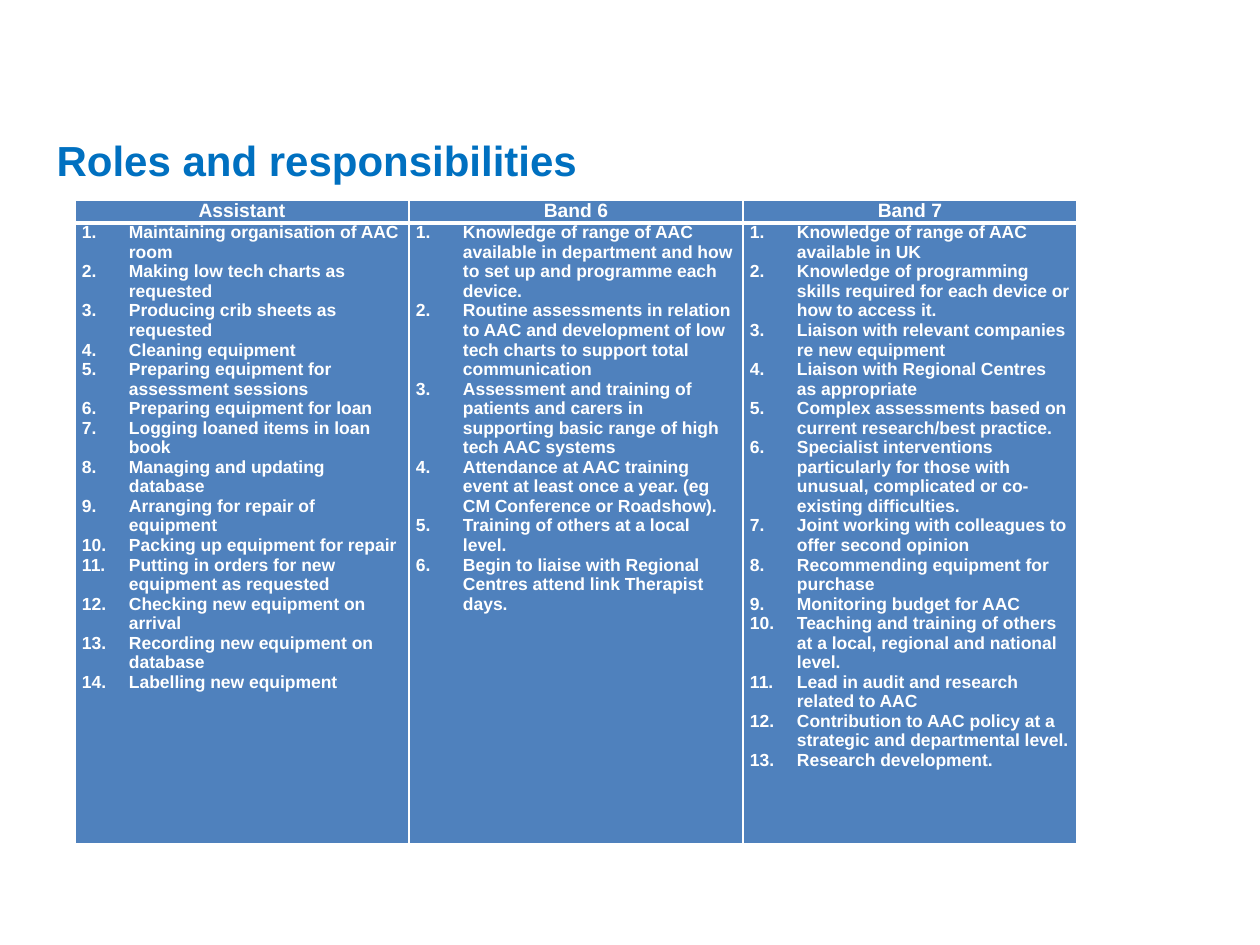
from pptx import Presentation, util as u
from pptx.dml.color import RGBColor
from pptx.enum import text
from pptx.oxml import parse_xml
from pptx.oxml.ns import nsdecls

SCALE = 914400 / 126
FONT = "Arial"
WHITE, BLUE, TITLE_BLUE = "FFFFFF", "4F81BD", "0070C0"

ROLES = {
    "Assistant": [
        "Maintaining organisation of AAC room",
        "Making low tech charts as requested",
        "Producing crib sheets as requested",
        "Cleaning equipment",
        "Preparing equipment for assessment sessions",
        "Preparing equipment for loan",
        "Logging loaned items in loan book",
        "Managing and updating database",
        "Arranging for repair of equipment",
        "Packing up equipment for repair",
        "Putting in orders for new equipment as requested",
        "Checking new equipment on arrival",
        "Recording new equipment on database",
        "Labelling new equipment",
    ],
    "Band 6": [
        "Knowledge of range of AAC available in department and how to set up and programme each device.",
        "Routine assessments in relation to AAC and development of low tech charts to support total communication",
        "Assessment and training of patients and carers in supporting basic range of high tech AAC systems",
        "Attendance at AAC training event at least once a year. (eg CM Conference or Roadshow).",
        "Training of others at a local level.",
        "Begin to liaise with Regional Centres attend link Therapist days.",
    ],
    "Band 7": [
        "Knowledge of range of AAC available in UK",
        "Knowledge of programming skills required for each device or how to access it.",
        "Liaison with relevant companies re new equipment",
        "Liaison with Regional Centres as appropriate",
        "Complex assessments based on current research/best practice.",
        "Specialist interventions particularly for those with unusual, complicated or co-existing difficulties.",
        "Joint working with colleagues to offer second opinion",
        "Recommending equipment for purchase",
        "Monitoring budget for AAC",
        "Teaching and training of others at a local, regional and national level.",
        "Lead in audit and research related to AAC",
        "Contribution to AAC policy at a strategic and departmental level.",
        "Research development.",
    ],
}


def px(length):
    """Turn pixels into EMU."""
    return u.Emu(round(length * SCALE))


def color(value):
    """Turn a hex string into a colour."""
    return RGBColor.from_string(value)


def add_span(para, words, size, ink):
    """Add one bold run to a paragraph."""
    span = para.add_run()
    span.text = words
    span.font.name = FONT
    span.font.size = u.Pt(size)
    span.font.bold = True
    span.font.color.rgb = color(ink)


def number_para(para):
    """Give a paragraph automatic numbering with a hanging indent."""
    props = para._p.get_or_add_pPr()
    props.set("marL", str(px(47)))
    props.set("indent", str(px(-47)))
    props.append(parse_xml(f'<a:buFont {nsdecls("a")} typeface="{FONT}"/>'))
    props.append(parse_xml(f'<a:buAutoNum {nsdecls("a")} type="arabicPeriod"/>'))
    props.append(parse_xml(f'<a:tabLst {nsdecls("a")}><a:tab pos="{px(63)}" algn="l"/></a:tabLst>'))


def style_cell(cell, top, bottom):
    """Set a cell's margins, white borders and blue fill."""
    cell.margin_left = cell.margin_right = px(7)
    cell.margin_top = cell.margin_bottom = 0
    props = cell._tc.get_or_add_tcPr()
    for side, width in zip("LRTB", (1, 1, top, bottom)):
        props.append(parse_xml(
            f'<a:ln{side} {nsdecls("a")} w="{u.Pt(width)}"><a:solidFill>'
            f'<a:srgbClr val="{WHITE}"/></a:solidFill></a:ln{side}>'))
    cell.fill.solid()
    cell.fill.fore_color.rgb = color(BLUE)


def add_title(page, left, top, width, height):
    """Place the heading in the title placeholder."""
    box = page.shapes.title
    box.left, box.top, box.width, box.height = map(px, (left, top, width, height))
    box.text_frame.vertical_anchor = text.MSO_ANCHOR.MIDDLE
    para = box.text_frame.paragraphs[0]
    para.alignment = text.PP_ALIGN.LEFT
    add_span(para, "Roles and responsibilities", 24, TITLE_BLUE)


def add_roles(page, left, top, width, height):
    """Place the table with one column of numbered duties per role."""
    header = 23
    table = page.shapes.add_table(2, len(ROLES), *map(px, (left, top, width, height))).table
    table.rows[0].height = px(header)
    table.rows[1].height = px(height - header)
    for index, (role, duties) in enumerate(ROLES.items()):
        table.columns[index].width = px(width / len(ROLES))
        head, body = table.cell(0, index), table.cell(1, index)
        style_cell(head, 1, 3)
        style_cell(body, 3, 1)
        para = head.text_frame.paragraphs[0]
        para.alignment = text.PP_ALIGN.CENTER
        add_span(para, role, 11, WHITE)
        for row, duty in enumerate(duties):
            frame = body.text_frame
            para = frame.add_paragraph() if row else frame.paragraphs[0]
            number_para(para)
            add_span(para, duty, 10, WHITE)


def main():
    """Build and save the deck."""
    deck = Presentation()
    deck.slide_width, deck.slide_height = px(1260), px(945)
    page = deck.slides.add_slide(deck.slide_layouts[5])
    add_title(page, 44, 125, 1171, 69)
    add_roles(page, 75, 200, 1002, 644)
    deck.save("out.pptx")


if __name__ == "__main__":
    main()
